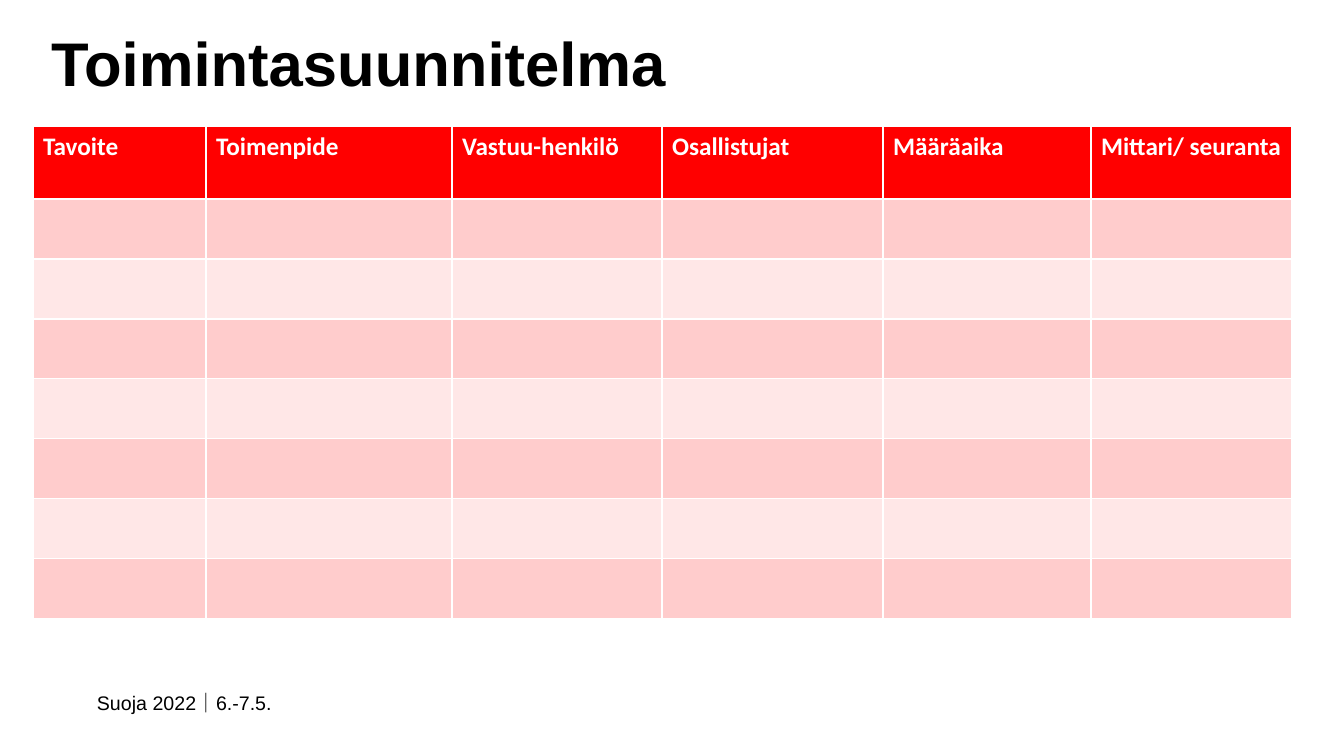
"""Builds the action plan slide with its empty planning table."""
from pptx import Presentation
from pptx import util as u
from pptx.dml.color import RGBColor
from pptx.enum import text

PX = 9071
COLORS = {"ink": "000000", "header": "FF0000", "header_text": "FFFFFF",
          "odd": "FFCCCC", "even": "FFE7E7"}
COLUMNS = {"Tavoite": 173, "Toimenpide": 246, "Vastuu-henkilö": 210,
           "Osallistujat": 221, "Määräaika": 208, "Mittari/ seuranta": 201}
HEADER_HEIGHT, ROW_HEIGHT, BLANK_ROWS = 73, 60, 7


def box(*lengths):
    return [length * PX for length in lengths]


def write(frame, words, color, **font):
    paragraph = frame.paragraphs[0]
    paragraph.alignment = text.PP_ALIGN.LEFT
    run = paragraph.add_run()
    run.text = words
    run.font.color.rgb = RGBColor.from_string(COLORS[color])
    for name, value in font.items():
        setattr(run.font, name, value)


deck = Presentation()
deck.slide_width, deck.slide_height = box(1344, 756)
slide = deck.slides.add_slide(deck.slide_layouts[5])

event = slide.shapes.add_textbox(*box(87, 686, 397, 34)).text_frame
event.word_wrap = True
write(event, "Suoja 2022｜6.-7.5.", "ink", name="Arial", size=u.Pt(14))

heading = slide.shapes.title
heading.left, heading.top, heading.width, heading.height = box(41, 24, 1159, 86)
heading_format = {"vertical_anchor": text.MSO_ANCHOR.MIDDLE,
                  "auto_size": text.MSO_AUTO_SIZE.NONE, "word_wrap": True}
for name, value in heading_format.items():
    setattr(heading.text_frame, name, value)
write(heading.text_frame, "Toimintasuunnitelma", "ink",
      name="Arial", size=u.Pt(44), bold=True)
heading.text_frame.paragraphs[0].line_spacing = 0.9

plan_height = HEADER_HEIGHT + BLANK_ROWS * ROW_HEIGHT
plan = slide.shapes.add_table(
    BLANK_ROWS + 1, len(COLUMNS),
    *box(33, 126, sum(COLUMNS.values()), plan_height)).table

for column, width in zip(plan.columns, COLUMNS.values()):
    column.width = width * PX

for number, row in enumerate(plan.rows):
    row.height = (ROW_HEIGHT if number else HEADER_HEIGHT) * PX
    band = ("odd" if number % 2 else "even") if number else "header"
    for cell in row.cells:
        cell.fill.solid()
        cell.fill.fore_color.rgb = RGBColor.from_string(COLORS[band])

for cell, label in zip(plan.rows[0].cells, COLUMNS):
    write(cell.text_frame, label, "header_text",
          name="Calibri", size=u.Pt(18), bold=True)

deck.save("out.pptx")
